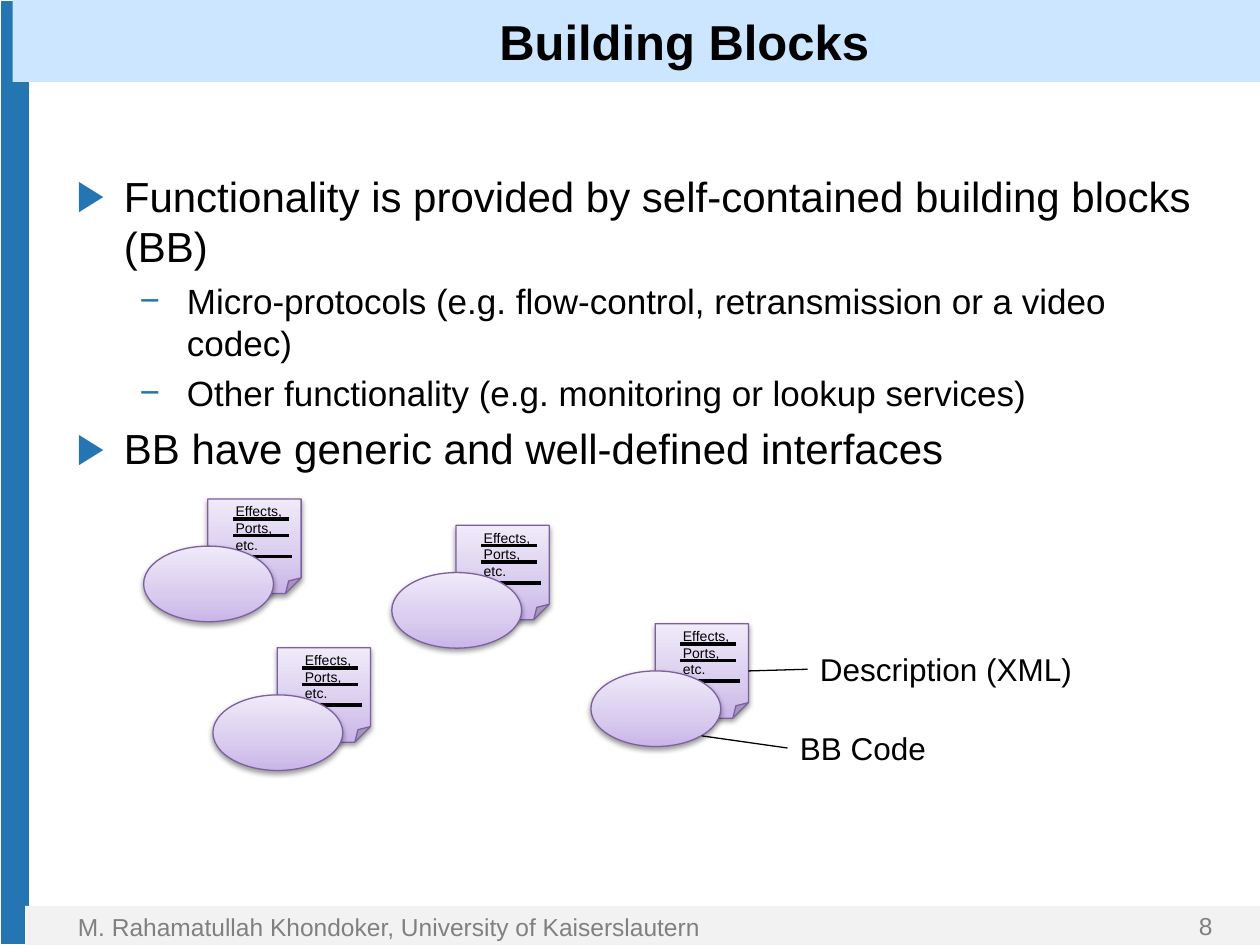
from copy import deepcopy

from lxml import etree
from pptx import Presentation
from pptx.dml.color import RGBColor
from pptx.enum.shapes import MSO_CONNECTOR, MSO_SHAPE
from pptx.enum.text import MSO_ANCHOR, PP_ALIGN
from pptx.oxml.ns import qn
from pptx.util import Pt

STRAIGHT = MSO_CONNECTOR.STRAIGHT
RECTANGLE, ELLIPSE, FOLDED = MSO_SHAPE.RECTANGLE, MSO_SHAPE.OVAL, MSO_SHAPE.FOLDED_CORNER
TOP, MIDDLE = MSO_ANCHOR.TOP, MSO_ANCHOR.MIDDLE
LEFT, CENTER, RIGHT = PP_ALIGN.LEFT, PP_ALIGN.CENTER, PP_ALIGN.RIGHT

COLORS = {
    "black": "000000", "blue": "2475B2", "band": "CCE6FF", "footer": "F2F2F2",
    "gray": "808080", "edge": "7D60A0",
    "deep": "C9B5E8", "mid": "D8CBEE", "pale": "F0EAF9",
}
GRADIENT = [(0, "deep"), (0.35, "mid"), (1, "pale")]
LEVELS = [
    {"bullet": "▶", "size": 24, "margin": 27, "before": 5.5},
    {"bullet": "−", "size": 20, "margin": 63, "before": 4.6},
]
BODY = [
    (0, "Functionality is provided by self-contained building blocks (BB)"),
    (1, "Micro-protocols (e.g. flow-control, retransmission or a video codec)"),
    (1, "Other functionality (e.g. monitoring or lookup services)"),
    (0, "BB have generic and well-defined interfaces"),
]


def rgb(name):
    """Return the named colour."""
    return RGBColor.from_string(COLORS[name])


def points(*lengths):
    """Convert numbers to point lengths."""
    return [Pt(length) for length in lengths]


def set_font(para, size, color="black", bold=False):
    """Set the font of a paragraph."""
    para.font.name, para.font.size, para.font.bold = "Arial", Pt(size), bold
    para.font.color.rgb = rgb(color)


def add_text(shapes, box, lines, size, color="black", align=LEFT, anchor=TOP, bold=False):
    """Add a wrapping text box with one paragraph for each line."""
    label = shapes.add_textbox(*points(*box))
    frame = label.text_frame
    frame.word_wrap, frame.vertical_anchor = True, anchor
    frame.text = "\n".join(lines)
    for para in frame.paragraphs:
        para.alignment = align
        set_font(para, size, color, bold)
    return label


def add_line(shapes, start, end, width):
    """Add a plain black line between two points."""
    line = shapes.add_connector(STRAIGHT, *points(*start, *end))
    line.line.color.rgb, line.line.width = rgb("black"), Pt(width)
    etree.SubElement(line._element.spPr, qn("a:effectLst"))
    return line


def add_band(shapes, box, color):
    """Add a flat rectangle without outline."""
    band = shapes.add_shape(RECTANGLE, *points(*box))
    band.shadow.inherit = False
    band.fill.solid()
    band.fill.fore_color.rgb = rgb(color)
    band.line.fill.background()


def add_lilac_shape(shapes, kind, box):
    """Add an outlined shape with a lilac gradient and a soft shadow."""
    shape = shapes.add_shape(kind, *points(*box))
    shape.line.color.rgb, shape.line.width = rgb("edge"), Pt(0.75)
    shape.fill.gradient()
    shape.fill.gradient_angle = 90
    properties = shape._element.spPr
    stops = properties.find(".//" + qn("a:gsLst"))
    stops.insert(1, deepcopy(stops[0]))
    for stop, (position, color) in zip(shape.fill.gradient_stops, GRADIENT):
        stop.position, stop.color.rgb = position, rgb(color)
    shape.shadow.inherit = False
    shadow = etree.SubElement(
        properties.find(qn("a:effectLst")), qn("a:outerShdw"),
        blurRad=str(Pt(3.1)), dist=str(Pt(1.6)), dir="5400000", rotWithShape="0")
    tint = etree.SubElement(shadow, qn("a:srgbClr"), val=COLORS["black"])
    etree.SubElement(tint, qn("a:alpha"), val="38000")
    return shape


def add_frame(page, width, height):
    """Add the side strip, the title band and the footer."""
    table = page.shapes.add_table(1, 1, *points(0, 0, 14.4, height)).table
    cell = table.cell(0, 0)
    cell.fill.solid()
    cell.fill.fore_color.rgb = rgb("blue")
    add_band(page.shapes, (7.2, 0, width - 7.2, 46.8), "band")
    top = height - 22.3
    add_band(page.shapes, (14.4, top, width - 14.4, 22.3), "footer")
    add_text(page.shapes, (593.3, top, 106.6, 22.3), ["8"], 14, "gray", RIGHT, MIDDLE)
    add_text(page.shapes, (37.4, top, 427.7, 24.5),
             ["M. Rahamatullah Khondoker, University of Kaiserslautern"], 14, "gray")


def add_body(page, box):
    """Add the two-level bullet list."""
    frame = page.shapes.add_textbox(*points(*box)).text_frame
    frame.word_wrap, frame.margin_top = True, Pt(8)
    frame.text = "\n".join(text for _, text in BODY)
    for index, (para, (level, _)) in enumerate(zip(frame.paragraphs, BODY)):
        style = LEVELS[level]
        para.level = level
        properties = para._p.get_or_add_pPr()
        properties.set("marL", str(Pt(style["margin"])))
        properties.set("indent", str(Pt(-27)))
        tint = etree.SubElement(properties, qn("a:buClr"))
        etree.SubElement(tint, qn("a:srgbClr"), val=COLORS["blue"])
        etree.SubElement(properties, qn("a:buFont"), typeface="Arial")
        etree.SubElement(properties, qn("a:buChar"), char=style["bullet"])
        if index:
            para.space_before = Pt(style["before"])
        set_font(para, style["size"])


def add_building_block(page, left, top):
    """Add a grouped description sheet and code ellipse, and return the sheet."""
    shapes = page.shapes.add_group_shape().shapes

    def rule(start, end, height):
        """Rule one line on the sheet."""
        add_line(shapes, (left + start, top + height), (left + end, top + height), 2)

    sheet = add_lilac_shape(shapes, FOLDED, (left + 36.7, top, 53.3, 54))
    rule(53.3, 85, 32.9)
    rule(47.5, 68.7, 43.6)
    add_lilac_shape(shapes, ELLIPSE, (left, top + 27, 74.2, 43.2))
    label = add_text(shapes, (left + 45.4, top - 1.4, 42.5, 36),
                     ["Effects,", "Ports,", "etc."], 8)
    label.text_frame.margin_right = 0
    for height in (11.5, 21):
        rule(51.1, 82.8, height)
    return sheet


def add_callouts(page, sheet):
    """Name the two parts of a building block."""
    description = add_text(page.shapes, (461.5, 367.9, 196.6, 29.1), ["Description (XML)"], 18)
    code = add_text(page.shapes, (450, 412.9, 196.6, 29.1), ["BB Code"], 18)
    pointer = add_line(page.shapes, (427.7, 383.4), (461.5, 382.4), 0.75)
    pointer.begin_connect(sheet, 3)
    pointer.end_connect(description, 1)
    pointer = add_line(page.shapes, (401, 420.5), (450, 427.5), 0.75)
    pointer.end_connect(code, 1)


def main():
    """Build the slide and save the deck."""
    deck = Presentation()
    width, height = 720, 540
    deck.slide_width, deck.slide_height = points(width, height)
    page = deck.slides.add_slide(deck.slide_layouts[6])
    add_frame(page, width, height)
    title = add_text(page.shapes, (82.1, 0, 617.8, 46.8), ["Building Blocks"], 28,
                     align=CENTER, anchor=MIDDLE, bold=True)
    title.text_frame.margin_top = title.text_frame.margin_bottom = Pt(2.9)
    add_body(page, (36.7, 89.3, 663.1, 407.5))
    for left, top in [(82.1, 285.1), (121.7, 370.1), (223.9, 300.2)]:
        add_building_block(page, left, top)
    add_callouts(page, add_building_block(page, 337.7, 356.4))
    deck.save("out.pptx")


if __name__ == "__main__":
    main()
